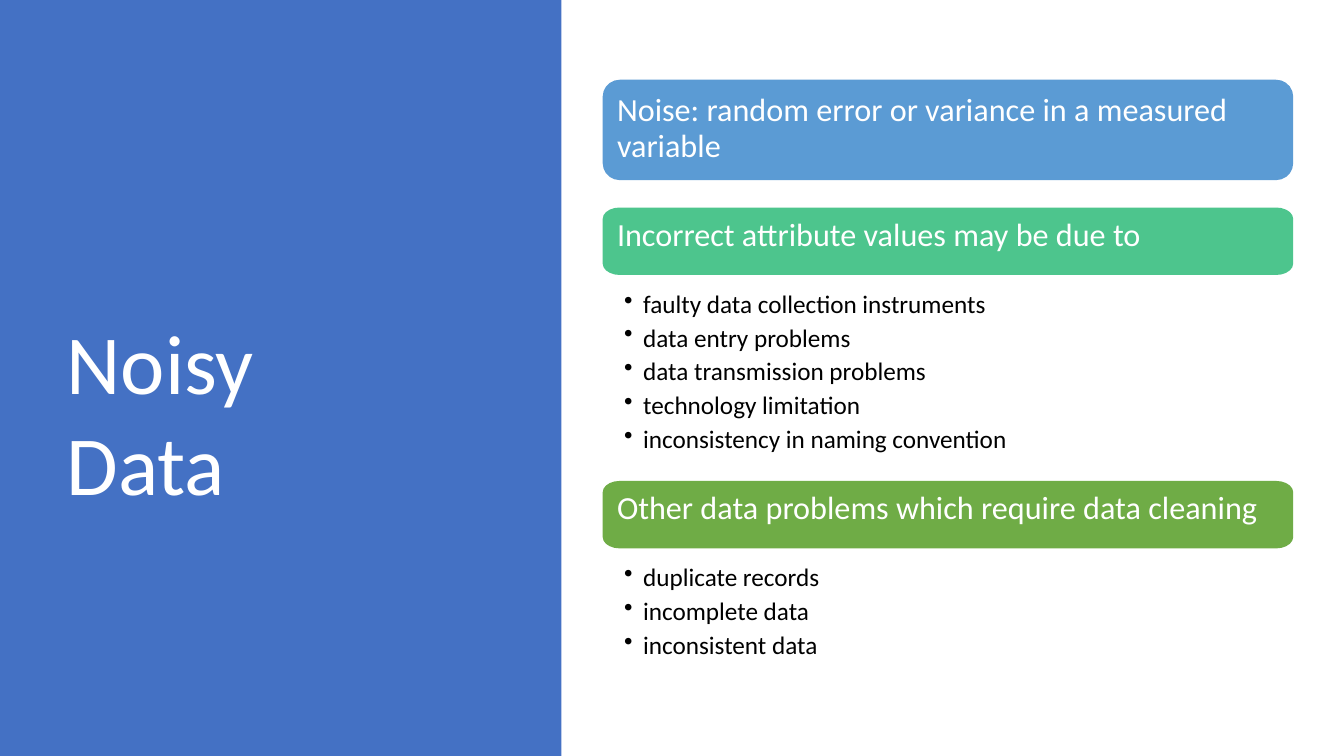
import math

from lxml import etree
from pptx import Presentation
from pptx import util as u
from pptx.dml import color
from pptx.enum import shapes, text
from pptx.oxml import ns

BAR_LEFT, BAR_WIDTH = 15.19, 17.4
HEADING_LEFT, HEADING_WIDTH = 15.55, 17.04
LIST_LEFT, LIST_WIDTH = 15.7, 9.73
SECTION_BAR_HEIGHT, LIST_OFFSET = 1.7, 1.88
CORNER_STEPS = 5


def rgb(hex_value):
    return color.RGBColor.from_string(hex_value)


class NoisyDataSlide:
    title = {"size": u.Pt(60), "name": "Calibri"}
    heading = {"size": u.Pt(23), "name": "Calibri"}
    item = {"size": u.Pt(18), "name": "Calibri"}
    frame_format = {
        "margin_left": 0, "margin_right": 0, "margin_bottom": 0,
        "word_wrap": True,
        "auto_size": text.MSO_AUTO_SIZE.SHAPE_TO_FIT_TEXT,
        "vertical_anchor": text.MSO_ANCHOR.TOP,
    }

    def __init__(self, deck):
        self.slide = deck.slides.add_slide(deck.slide_layouts[6])

    def paint(self, shape, fill):
        shape.shadow.inherit = False
        shape.fill.solid()
        shape.fill.fore_color.rgb = rgb(fill)
        shape.line.fill.background()

    def panel(self, left, top, width, height, fill):
        panel = self.slide.shapes.add_shape(
            shapes.MSO_SHAPE.RECTANGLE,
            u.Cm(left), u.Cm(top), u.Cm(width), u.Cm(height))
        self.paint(panel, fill)

    def bar(self, top, height, fill):
        """Rounded bar whose corners are a sixth of its height, 0.43 cm wide."""
        rx, ry = 0.43, height / 6
        right, bottom = BAR_LEFT + BAR_WIDTH, top + height
        centres = [(right - rx, bottom - ry), (BAR_LEFT + rx, bottom - ry),
                   (BAR_LEFT + rx, top + ry), (right - rx, top + ry)]
        outline = []
        for quarter, (cx, cy) in enumerate(centres):
            for step in range(CORNER_STEPS + 1):
                angle = (quarter + step / CORNER_STEPS) * math.pi / 2
                outline.append((u.Cm(cx + rx * math.cos(angle)),
                                u.Cm(cy + ry * math.sin(angle))))
        builder = self.slide.shapes.build_freeform(*outline[0], scale=1.0)
        builder.add_line_segments(outline[1:], close=True)
        self.paint(builder.convert_to_shape(), fill)

    def text_box(self, left, top, width, height, lines, style, ink,
                 before, margin_top=0.03, spacing=None):
        box = self.slide.shapes.add_textbox(
            u.Cm(left), u.Cm(top), u.Cm(width), u.Cm(height))
        frame = box.text_frame
        for name, value in self.frame_format.items():
            setattr(frame, name, value)
        frame.margin_top = u.Cm(margin_top)
        for index, line in enumerate(lines):
            paragraph = frame.add_paragraph() if index else frame.paragraphs[0]
            paragraph.space_before = u.Pt(before)
            if spacing:
                paragraph.line_spacing = u.Pt(spacing)
            run = paragraph.add_run()
            run.text = line
            for name, value in style.items():
                setattr(run.font, name, value)
            run.font.color.rgb = rgb(ink)
        return frame

    def bullets(self, top, items):
        frame = self.text_box(LIST_LEFT, top, LIST_WIDTH, 0.86 * len(items),
                              items, self.item, "000000", 2.5, margin_top=0.15)
        for paragraph in frame.paragraphs:
            properties = paragraph._p.get_or_add_pPr()
            properties.set("marL", str(u.Cm(0.51)))
            properties.set("indent", str(-u.Cm(0.48)))
            etree.SubElement(properties, ns.qn("a:buChar")).set("char", "•")

    def section(self, top, fill, heading, items):
        self.bar(top, SECTION_BAR_HEIGHT, fill)
        self.text_box(HEADING_LEFT, top + 0.14, HEADING_WIDTH, 1.04,
                      [heading], self.heading, "FFFFFF", 1)
        self.bullets(top + LIST_OFFSET, items)


def main():
    deck = Presentation()
    deck.slide_width, deck.slide_height = u.Cm(33.87), u.Cm(19.05)
    page = NoisyDataSlide(deck)

    # Title panel
    page.panel(0, 0, 14.15, 19.05, "4471C4")
    page.text_box(1.68, 7.8, 8.9, 2.62, ["Noisy Data"],
                  page.title, "FFFFFF", 1)

    # Definition of noise
    page.bar(2.01, 2.53, "5B9BD4")
    page.text_box(HEADING_LEFT, 2.34, HEADING_WIDTH, 1.92,
                  ["Noise: random error or variance in a measured variable"],
                  page.heading, "FFFFFF", 3.8, margin_top=0, spacing=25.3)

    # Causes and other problems
    page.section(5.23, "4DC58D", "Incorrect attribute values may be due to", [
        "faulty data collection instruments",
        "data entry problems",
        "data transmission problems",
        "technology limitation",
        "inconsistency in naming convention",
    ])
    page.section(12.12, "6FAC46",
                 "Other data problems which require data cleaning", [
                     "duplicate records",
                     "incomplete data",
                     "inconsistent data",
                 ])

    deck.save("out.pptx")


if __name__ == "__main__":
    main()
